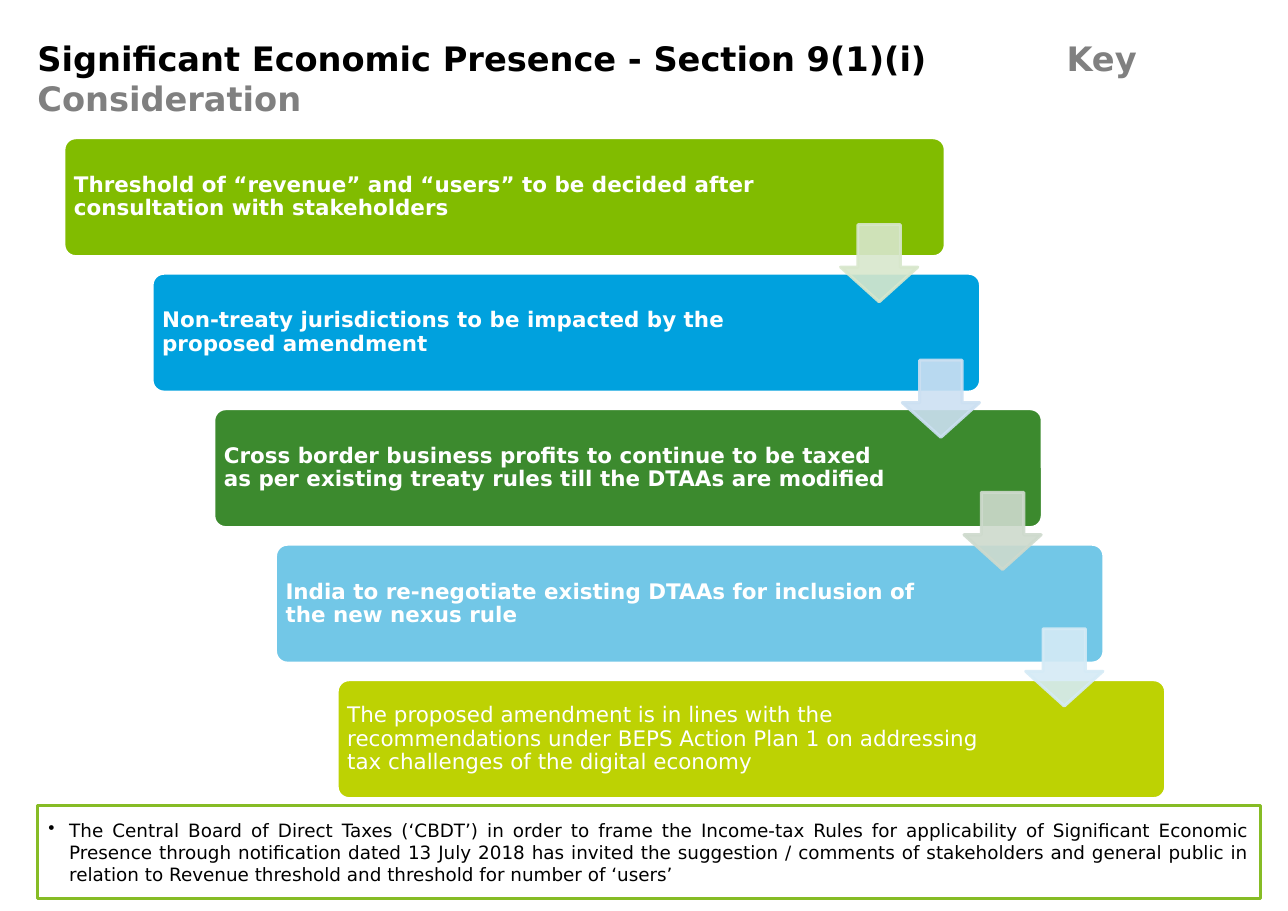
from dataclasses import dataclass

from lxml import etree
from pptx import Presentation
from pptx.dml import color
from pptx.enum import shapes, text
from pptx.oxml import ns
from pptx.util import Inches, Pt


@dataclass(frozen=True)
class Theme:
    font: str = "DejaVu Sans"
    title_size: int = 22
    step_size: int = 14
    note_size: int = 12
    line_width: int = 2
    black: str = "000000"
    grey: str = "808080"
    white: str = "FFFFFF"
    note_border: str = "86BC25"


@dataclass(frozen=True)
class Step:
    wording: str
    fill: str
    left: float
    width: float = 7.52
    bold: bool = True


@dataclass(frozen=True)
class Arrow:
    top: float
    fill: str


THEME = Theme()
STEP_TOP, STEP_PITCH, STEP_HEIGHT = 1.25, 1.23, 1.08
INDENT = 0.56  # sideways shift from one step to the next
ARROW_LEFT, ARROW_SIZE = 7.63, 0.7

STEPS = [
    Step("Threshold of “revenue” and “users” to be decided after consultation "
         "with stakeholders", "81BC00", 0.58, width=8),
    Step("Non-treaty jurisdictions to be impacted by the proposed amendment",
         "00A1DE", 1.38),
    Step("Cross border business profits to continue to be taxed as per existing "
         "treaty rules till the DTAAs are modified", "3C8A2E", 1.38 + INDENT),
    Step("India to re-negotiate existing DTAAs for inclusion of the new nexus rule",
         "72C7E7", 1.38 + 2 * INDENT),
    Step("The proposed amendment is in lines with the recommendations under BEPS "
         "Action Plan 1 on addressing tax challenges of the digital economy",
         "BDD203", 1.38 + 3 * INDENT, bold=False),
]
ARROWS = [Arrow(2.04, "D8E7CC"), Arrow(3.27, "CCE0F2"),
          Arrow(4.47, "CEDACD"), Arrow(5.71, "D5EBF6")]
NOTE = ("The Central Board of Direct Taxes (‘CBDT’) in order to frame the Income-tax "
        "Rules for applicability of Significant Economic Presence through notification "
        "dated 13 July 2018 has invited the suggestion / comments of stakeholders and "
        "general public in relation to Revenue threshold and threshold for number of "
        "‘users’")


def write(paragraph, wording: str, *, size: int, ink: str, bold: bool = False,
          align=text.PP_ALIGN.LEFT, spacing: float = 1.0) -> None:
    """Add a formatted run to a paragraph."""
    paragraph.alignment = align
    paragraph.line_spacing = spacing
    run = paragraph.add_run()
    run.text = wording
    run.font.name = THEME.font
    run.font.size = Pt(size)
    run.font.bold = bold
    run.font.color.rgb = color.RGBColor.from_string(ink)


def set_frame(frame, anchor, left: float, top: float, right: float, bottom: float) -> None:
    frame.word_wrap = True
    frame.auto_size = text.MSO_AUTO_SIZE.NONE
    frame.vertical_anchor = anchor
    frame.margin_left, frame.margin_top = Inches(left), Inches(top)
    frame.margin_right, frame.margin_bottom = Inches(right), Inches(bottom)


def add_block(slide, preset, left: float, top: float, width: float, height: float,
              fill: str, line: str, adjustments: tuple[float, ...] = ()):
    block = slide.shapes.add_shape(preset, Inches(left), Inches(top),
                                   Inches(width), Inches(height))
    block.shadow.inherit = False
    block.fill.solid()
    block.fill.fore_color.rgb = color.RGBColor.from_string(fill)
    block.line.color.rgb = color.RGBColor.from_string(line)
    block.line.width = Pt(THEME.line_width)
    for index, value in enumerate(adjustments):
        block.adjustments[index] = value
    return block


def add_title(slide) -> None:
    title = slide.shapes.title
    title.left, title.top = Inches(0.34), Inches(0.34)
    title.width, title.height = Inches(10.01), Inches(0.79)
    set_frame(title.text_frame, text.MSO_ANCHOR.TOP, 0, 0, 0, 0)
    heading = title.text_frame.paragraphs[0]
    write(heading, "Significant Economic Presence - Section 9(1)(i)\t",
          size=THEME.title_size, ink=THEME.black, bold=True)
    write(heading, "Key Consideration", size=THEME.title_size, ink=THEME.grey, bold=True)
    # Tab stop that sets the second part of the title apart
    tabs = etree.SubElement(heading._p.get_or_add_pPr(), ns.qn("a:tabLst"))
    etree.SubElement(tabs, ns.qn("a:tab"), pos=str(Inches(9.34)), algn="l")


def add_step(slide, row: int, step: Step) -> None:
    bar = add_block(slide, shapes.MSO_SHAPE.ROUNDED_RECTANGLE, step.left,
                    STEP_TOP + row * STEP_PITCH, step.width, STEP_HEIGHT,
                    step.fill, THEME.white, (0.1,))
    set_frame(bar.text_frame, text.MSO_ANCHOR.MIDDLE, 0.06, 0.06, 1.33, 0.06)
    write(bar.text_frame.paragraphs[0], step.wording, size=THEME.step_size,
          ink=THEME.white, bold=step.bold, spacing=0.9)


def add_arrow(slide, row: int, arrow: Arrow) -> None:
    pointer = add_block(slide, shapes.MSO_SHAPE.DOWN_ARROW, ARROW_LEFT + row * INDENT,
                        arrow.top, ARROW_SIZE, ARROW_SIZE, arrow.fill, arrow.fill,
                        (0.55, 0.45))
    # Slight transparency on fill and line
    for shade in pointer._element.spPr.iter(ns.qn("a:srgbClr")):
        etree.SubElement(shade, ns.qn("a:alpha"), val="90000")


def add_note(slide) -> None:
    note = add_block(slide, shapes.MSO_SHAPE.RECTANGLE, 0.34, 7.31, 11.1, 0.85,
                     THEME.white, THEME.note_border)
    set_frame(note.text_frame, text.MSO_ANCHOR.MIDDLE, 0.1, 0.1, 0.1, 0.1)
    remark = note.text_frame.paragraphs[0]
    write(remark, NOTE, size=THEME.note_size, ink=THEME.black,
          align=text.PP_ALIGN.JUSTIFY)
    # Hanging bullet
    properties = remark._p.get_or_add_pPr()
    properties.set("marL", str(Inches(0.19)))
    properties.set("indent", str(-Inches(0.19)))
    etree.SubElement(properties, ns.qn("a:buChar"), char="•")


def main() -> None:
    deck = Presentation()
    deck.slide_width, deck.slide_height = Inches(11.69), Inches(8.27)
    slide = deck.slides.add_slide(deck.slide_layouts[5])  # title only

    add_title(slide)
    for row, step in enumerate(STEPS):
        add_step(slide, row, step)
    for row, arrow in enumerate(ARROWS):
        add_arrow(slide, row, arrow)
    add_note(slide)

    deck.save("out.pptx")


if __name__ == "__main__":
    main()
